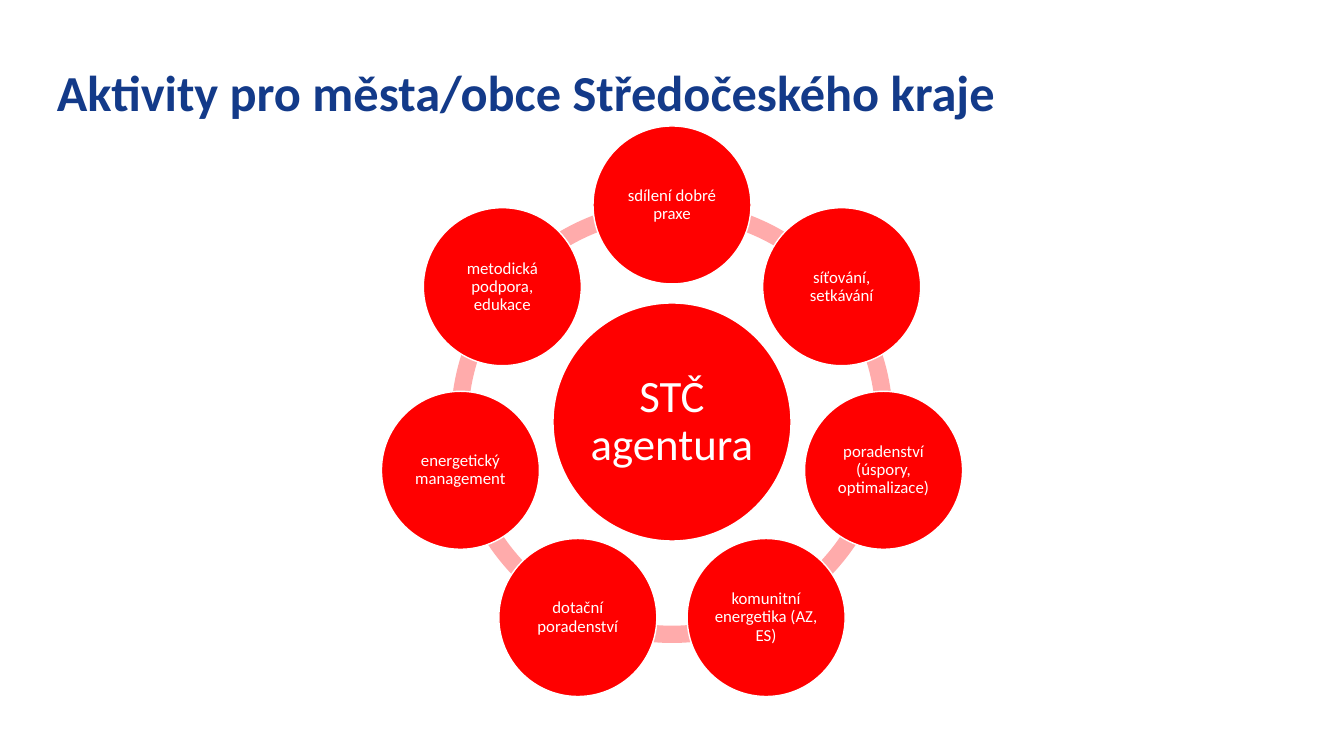
import math

from pptx import Presentation, util as u
from pptx.dml.color import RGBColor
from pptx.enum import shapes, text

PX = 914400 / 100.8
NAVY = RGBColor(0x13, 0x3A, 0x89)
RED = RGBColor(0xFF, 0x00, 0x00)
PINK = RGBColor(0xFF, 0xAB, 0xAB)
WHITE = RGBColor(0xFF, 0xFF, 0xFF)
FONT = "Calibri"
TITLE = "Aktivity pro města/obce Středočeského kraje"
HUB = "STČ agentura"
ACTIVITIES = [
    "sdílení dobré praxe",
    "síťování, setkávání",
    "poradenství (úspory, optimalizace)",
    "komunitní energetika (AZ, ES)",
    "dotační poradenství",
    "energetický management",
    "metodická podpora, edukace",
]


def px(n):
    return u.Emu(round(n * PX))


def write(shape, words, size, color, align, bold=False):
    tf = shape.text_frame
    tf.word_wrap = True
    tf.vertical_anchor = text.MSO_ANCHOR.MIDDLE
    p = tf.paragraphs[0]
    p.alignment = align
    p.line_spacing = 0.9
    r = p.add_run()
    r.text = words
    r.font.name = FONT
    r.font.size = u.Pt(size)
    r.font.bold = bold
    r.font.color.rgb = color


def add_title(s, x, y, w, h):
    box = s.shapes.add_textbox(px(x), px(y), px(w), px(h))
    write(box, TITLE, 36, NAVY, text.PP_ALIGN.LEFT, bold=True)


def add_round(s, kind, cx, cy, size, color):
    sp = s.shapes.add_shape(kind, px(cx - size / 2), px(cy - size / 2), px(size), px(size))
    sp.shadow.inherit = False
    sp.fill.solid()
    sp.fill.fore_color.rgb = color
    return sp


def add_arc(s, cx, cy, size, start, end):
    sp = add_round(s, shapes.MSO_SHAPE.BLOCK_ARC, cx, cy, size, PINK)
    sp.line.fill.background()
    sp.adjustments[0] = start % 360 * 0.6
    sp.adjustments[1] = end % 360 * 0.6
    sp.adjustments[2] = 0.039


def add_circle(s, cx, cy, size, words, font_size, inset):
    sp = add_round(s, shapes.MSO_SHAPE.OVAL, cx, cy, size, RED)
    sp.line.color.rgb = WHITE
    sp.line.width = u.Pt(1)
    tf = sp.text_frame
    tf.margin_left = tf.margin_right = tf.margin_top = tf.margin_bottom = px(inset)
    write(sp, words, font_size, WHITE, text.PP_ALIGN.CENTER)


def add_wheel(s, x, y, size):
    cx, cy = x + size / 2, y + size / 2
    orbit = 217
    step = 360 / len(ACTIVITIES)
    angles = [270 + i * step for i in range(len(ACTIVITIES))]
    for angle in angles:
        add_arc(s, cx, cy, size, angle, angle + step)
    add_circle(s, cx, cy, 238, HUB, 32, 0)
    for angle, words in zip(angles, ACTIVITIES):
        a = math.radians(angle)
        add_circle(s, cx + orbit * math.cos(a), cy + orbit * math.sin(a), 158, words, 12, 2)


def main():
    prs = Presentation()
    prs.slide_width, prs.slide_height = px(1344), px(756)
    s = prs.slides.add_slide(prs.slide_layouts[6])
    add_title(s, 47, 45, 1199, 100)
    add_wheel(s, 451, 201, 442)
    prs.save("out.pptx")


if __name__ == "__main__":
    main()
